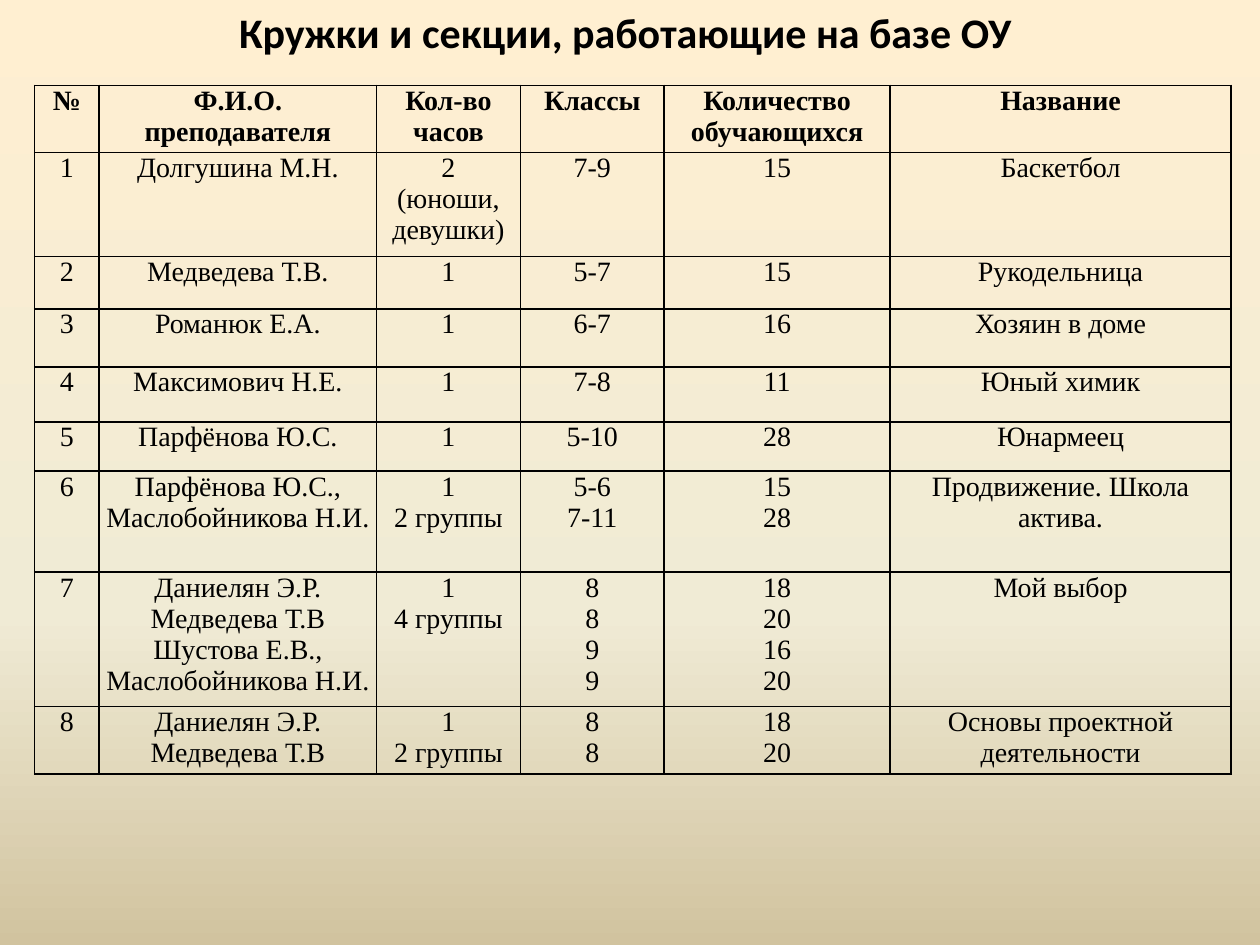
from copy import deepcopy

from lxml import etree
from pptx import Presentation
from pptx.dml.color import RGBColor
from pptx.enum.text import MSO_ANCHOR, MSO_AUTO_SIZE, PP_ALIGN
from pptx.oxml.ns import qn
from pptx.util import Cm, Pt

CENTER, LEFT = PP_ALIGN.CENTER, PP_ALIGN.LEFT
TOP = MSO_ANCHOR.TOP
GROW = MSO_AUTO_SIZE.SHAPE_TO_FIT_TEXT

COLORS = {"text": "000000", "border": "000000",
          "sky": "FFEFD1", "middle": "F0EBD5", "sand": "D1C39F"}
BACKGROUND = [(0, "sky"), (0.65, "middle"), (1, "sand")]

# Content: a line break starts a new paragraph
TITLE = "Кружки и секции, работающие на базе ОУ"
HEADER = ("№", "Ф.И.О. преподавателя", "Кол-во\nчасов", "Классы",
          "Количество обучающихся", "Название")
CLUBS = [
    ("Долгушина М.Н.", "2\n(юноши, девушки)", "7-9", "15", "Баскетбол"),
    ("Медведева Т.В.", "1", "5-7", "15", "Рукодельница"),
    ("Романюк Е.А.", "1", "6-7", "16", "Хозяин в доме"),
    ("Максимович Н.Е.", "1", "7-8", "11", "Юный химик"),
    ("Парфёнова Ю.С.", "1", "5-10", "28", "Юнармеец"),
    ("Парфёнова Ю.С.,\nМаслобойникова Н.И.", "1\n2 группы", "5-6\n7-11", "15\n28",
     "Продвижение. Школа актива."),
    ("Даниелян Э.Р.\nМедведева Т.В\nШустова Е.В.,\nМаслобойникова Н.И.",
     "1\n4 группы", "8\n8\n9\n9", "18\n20\n16\n20", "Мой выбор"),
    ("Даниелян Э.Р.\nМедведева Т.В", "1\n2 группы", "8\n8", "18\n20",
     "Основы проектной деятельности"),
]
COLUMN_WIDTHS = [1.3, 5.59, 2.9, 2.9, 4.55, 6.88]
ROW_HEIGHTS = [1.35, 2.1, 1.05, 1.17, 1.11, 0.99, 2.04, 2.7, 1.35]


def rgb(name):
    return RGBColor.from_string(COLORS[name])


def write(frame, text, font, size, bold, align):
    frame.text = text
    for paragraph in frame.paragraphs:
        paragraph.alignment = align
        for run in paragraph.runs:
            run.font.name = font
            run.font.size = Pt(size)
            run.font.bold = bold
            run.font.color.rgb = rgb("text")


def add_borders(cell):
    properties = cell._tc.get_or_add_tcPr()
    for position, side in enumerate(("lnL", "lnR", "lnT", "lnB")):
        line = etree.Element(qn(f"a:{side}"), w=str(Pt(1)))
        fill = etree.SubElement(line, qn("a:solidFill"))
        etree.SubElement(fill, qn("a:srgbClr"), val=COLORS["border"])
        properties.insert(position, line)


def paint_background(slide):
    fill = slide.background.fill
    fill.gradient()
    fill.gradient_angle = 270
    stop_list = slide.element.find(f".//{qn('a:gsLst')}")
    stop_list.append(deepcopy(stop_list[-1]))
    for stop, (position, color) in zip(fill.gradient_stops, BACKGROUND):
        stop.position = position
        stop.color.rgb = rgb(color)


def add_title(slide):
    frame = slide.shapes.add_textbox(Cm(4.57), 0, Cm(18.03), Cm(1.27)).text_frame
    frame.word_wrap = True
    frame.auto_size = GROW
    write(frame, TITLE, "Calibri", 24, True, LEFT)


def add_clubs(slide):
    rows = [HEADER] + [(str(number), *club) for number, club in enumerate(CLUBS, 1)]
    table = slide.shapes.add_table(
        len(rows), len(HEADER), Cm(0.7), Cm(1.72),
        Cm(sum(COLUMN_WIDTHS)), Cm(sum(ROW_HEIGHTS))).table
    table.first_row = table.horz_banding = False
    for column, width in zip(table.columns, COLUMN_WIDTHS):
        column.width = Cm(width)
    for row, height, texts in zip(table.rows, ROW_HEIGHTS, rows):
        row.height = Cm(height)
        for cell, text in zip(row.cells, texts):
            cell.margin_left = cell.margin_right = Cm(0.1)
            cell.margin_top = cell.margin_bottom = 0
            cell.vertical_anchor = TOP
            cell.fill.background()
            add_borders(cell)
            write(cell.text_frame, text, "Times New Roman", 16, texts is HEADER, CENTER)


def main():
    deck = Presentation()
    deck.slide_width, deck.slide_height = Cm(25.4), Cm(19.05)
    slide = deck.slides.add_slide(deck.slide_layouts[6])
    paint_background(slide)
    add_title(slide)
    add_clubs(slide)
    deck.save("out.pptx")


if __name__ == "__main__":
    main()
